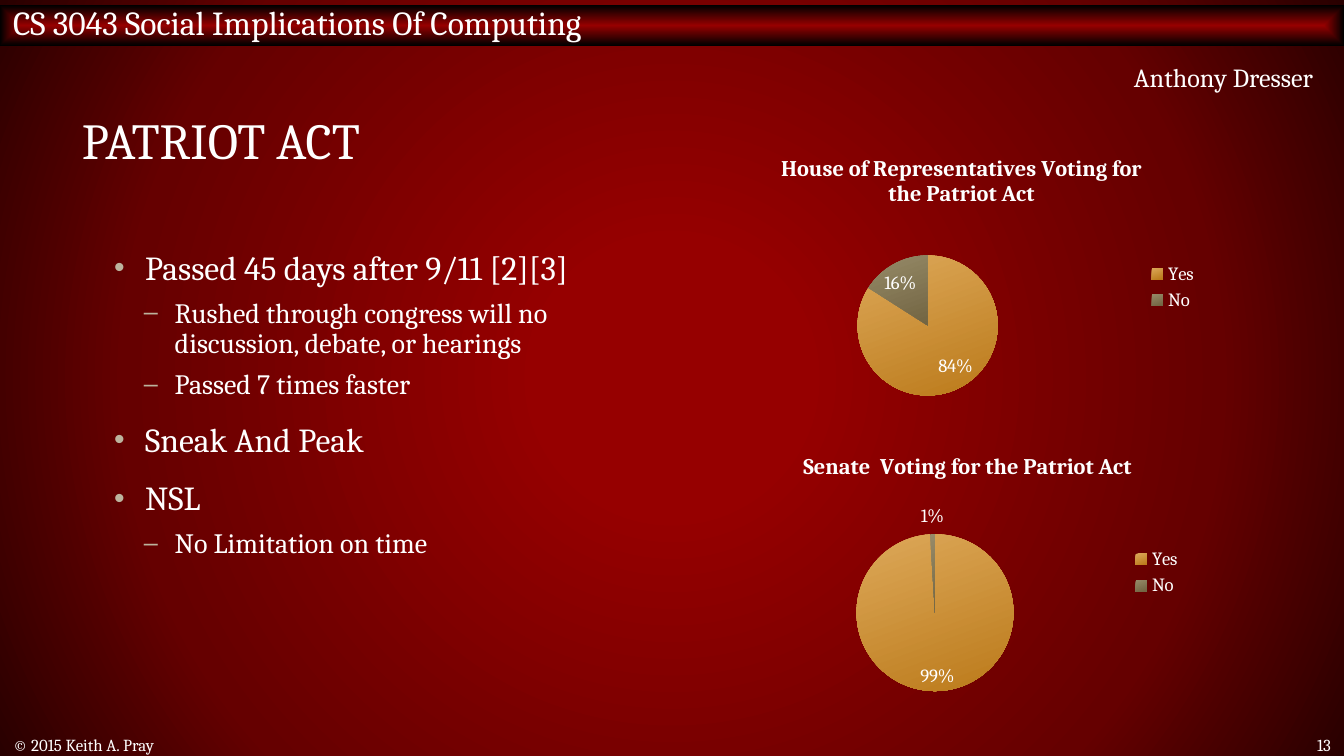
import pptx
import pptx.chart.data
import pptx.dml.color
import pptx.enum.chart
import pptx.enum.shapes
import pptx.enum.text
import pptx.oxml
import pptx.oxml.ns
import pptx.util
from pptx.util import Inches

RGBColor = pptx.dml.color.RGBColor
ALIGN = pptx.enum.text.PP_ALIGN
ANCHOR = pptx.enum.text.MSO_ANCHOR

WHITE = RGBColor(0xFF, 0xFF, 0xFF)
RED = RGBColor(0x96, 0x00, 0x00)
DARK_RED = RGBColor(0x65, 0x00, 0x00)
MAROON = RGBColor(0x29, 0x00, 0x00)
BLACK = RGBColor(0x00, 0x00, 0x00)
BULLET = RGBColor(0xBC, 0xB4, 0x9E)
GOLD = RGBColor(0xDD, 0xA8, 0x59)
DARK_GOLD = RGBColor(0xBB, 0x7A, 0x1A)
OLIVE = RGBColor(0x96, 0x8A, 0x68)
DARK_OLIVE = RGBColor(0x72, 0x65, 0x42)

FONT = "Cambria"
NS = pptx.oxml.ns.nsdecls("a")

# Per outline level: text size, space before, left margin, bullet character
LEVELS = [(18, 12, 0.23, "•"), (15, 6, 0.45, "–")]
OUTLINE = [
    (0, "Passed 45 days after 9/11 [2][3]"),
    (1, "Rushed through congress will no discussion, debate, or hearings"),
    (1, "Passed 7 times faster"),
    (0, "Sneak And Peak"),
    (0, "NSL"),
    (1, "No Limitation on time"),
]


def style_font(font, size, bold=None):
    font.name = FONT
    font.size = pptx.util.Pt(size)
    font.color.rgb = WHITE
    font.bold = bold


def place(shape, left, top, width, height):
    shape.left, shape.top = Inches(left), Inches(top)
    shape.width, shape.height = Inches(width), Inches(height)


def set_path_gradient(fill, owner, path, stops):
    """Give the fill found inside owner a gradient running outward from its centre."""
    fill.gradient()
    stop_xml = "".join(
        f'<a:gs pos="{position * 1000}"><a:srgbClr val="{color}"/></a:gs>'
        for position, color in stops)
    gradient = pptx.oxml.parse_xml(
        f'<a:gradFill {NS} rotWithShape="1"><a:gsLst>{stop_xml}</a:gsLst>'
        f'<a:path path="{path}"><a:fillToRect l="50000" t="50000" r="50000" b="50000"/>'
        '</a:path></a:gradFill>')
    default = owner.find(".//" + pptx.oxml.ns.qn("a:gradFill"))
    default.getparent().replace(default, gradient)


def fill_line(frame, text, size, align=ALIGN.LEFT, anchor=ANCHOR.MIDDLE):
    frame.text = text
    frame.word_wrap = True
    frame.vertical_anchor = anchor
    paragraph = frame.paragraphs[0]
    paragraph.alignment = align
    style_font(paragraph.runs[0].font, size)
    return paragraph


def add_label(slide, box, text, size, align=ALIGN.LEFT, anchor=ANCHOR.MIDDLE):
    label = slide.shapes.add_textbox(*map(Inches, box))
    fill_line(label.text_frame, text, size, align, anchor)


def add_header(slide):
    header = slide.shapes.add_shape(
        pptx.enum.shapes.MSO_SHAPE.RECTANGLE,
        Inches(0), Inches(0.04), Inches(10), Inches(0.3))
    header.shadow.inherit = False
    header.line.fill.background()
    set_path_gradient(header.fill, header._element, "shape", [(0, RED), (100, BLACK)])
    header.text_frame.margin_top = 0
    fill_line(header.text_frame, "CS 3043 Social Implications Of Computing", 18)


def set_title(slide):
    title = slide.shapes.title
    place(title, 0.51, 0.58, 8.5, 1)
    fill_line(title.text_frame, "PATRIOT ACT", 27).line_spacing = 0.8
    title.text_frame.auto_size = pptx.enum.text.MSO_AUTO_SIZE.NONE


def add_bullet(paragraph, margin, character):
    properties = paragraph._p.get_or_add_pPr()
    properties.set("marL", str(Inches(margin)))
    properties.set("indent", str(-Inches(0.23)))
    for element in (f'<a:buClr {NS}><a:srgbClr val="{BULLET}"/></a:buClr>',
                    f'<a:buSzPct {NS} val="90000"/>',
                    f'<a:buFont {NS} typeface="Arial"/>',
                    f'<a:buChar {NS} char="{character}"/>'):
        properties.append(pptx.oxml.parse_xml(element))


def set_outline(slide):
    body = slide.placeholders[1]
    place(body, 0.75, 1.82, 4.08, 3.67)
    frame = body.text_frame
    frame.text = "\n".join(text for _, text in OUTLINE)
    frame.word_wrap = True
    frame.auto_size = pptx.enum.text.MSO_AUTO_SIZE.NONE
    for index, (paragraph, (level, _)) in enumerate(zip(frame.paragraphs, OUTLINE)):
        size, space, margin, character = LEVELS[level]
        paragraph.level = level
        add_bullet(paragraph, margin, character)
        paragraph.line_spacing = 0.9
        paragraph.space_before = pptx.util.Pt(space if index else 0)
        style_font(paragraph.runs[0].font, size)


def add_vote_pie(slide, box, title, votes):
    data = pptx.chart.data.CategoryChartData()
    data.categories = ["Yes", "No"]
    data.add_series("Series 1", votes)
    chart = slide.shapes.add_chart(
        pptx.enum.chart.XL_CHART_TYPE.PIE, *map(Inches, box), data).chart
    style_font(chart.font, 10)

    chart.has_title = True
    chart.chart_title.text_frame.text = title
    style_font(chart.chart_title.text_frame.paragraphs[0].runs[0].font, 12, bold=True)
    chart.chart_title.include_in_layout = False

    chart.has_legend = True
    chart.legend.position = pptx.enum.chart.XL_LEGEND_POSITION.RIGHT
    chart.legend.include_in_layout = False
    style_font(chart.legend.font, 10)

    plot = chart.plots[0]
    plot.vary_by_categories = True
    plot.has_data_labels = True
    labels = plot.data_labels
    labels.show_percentage = True
    labels.show_value = False
    labels.number_format = "0%"
    labels.number_format_is_linked = False
    labels.position = pptx.enum.chart.XL_LABEL_POSITION.BEST_FIT
    style_font(labels.font, 10)

    for index, shades in enumerate([(GOLD, DARK_GOLD), (OLIVE, DARK_OLIVE)]):
        slice_format = plot.series[0].points[index].format
        slice_format.fill.gradient()
        slice_format.fill.gradient_angle = 290
        for stop, shade in zip(slice_format.fill.gradient_stops, shades):
            stop.color.rgb = shade
        slice_format.line.fill.background()


def main():
    deck = pptx.Presentation()
    deck.slide_width = Inches(10)
    deck.slide_height = deck.slide_width * 9 // 16
    slide = deck.slides.add_slide(deck.slide_layouts[1])
    set_path_gradient(slide.background.fill, slide._element, "circle",
                      [(17, RED), (71, DARK_RED), (100, MAROON)])
    add_header(slide)
    set_title(slide)
    set_outline(slide)
    add_label(slide, (0, 5.46, 6.08, 0.16), "© 2015 Keith A. Pray", 9)
    add_label(slide, (9.32, 5.46, 0.68, 0.16), "13", 9, ALIGN.RIGHT)
    add_vote_pie(slide, (5.3, 1.02, 3.71, 2.23),
                 "House of Representatives Voting for the Patriot Act", (84, 16))
    add_vote_pie(slide, (5.51, 3.24, 3.38, 2.04),
                 "Senate  Voting for the Patriot Act", (99, 1))
    add_label(slide, (7.49, 0.41, 2.38, 0.34), "Anthony Dresser", 14,
              ALIGN.RIGHT, ANCHOR.TOP)
    deck.save("out.pptx")


if __name__ == "__main__":
    main()
